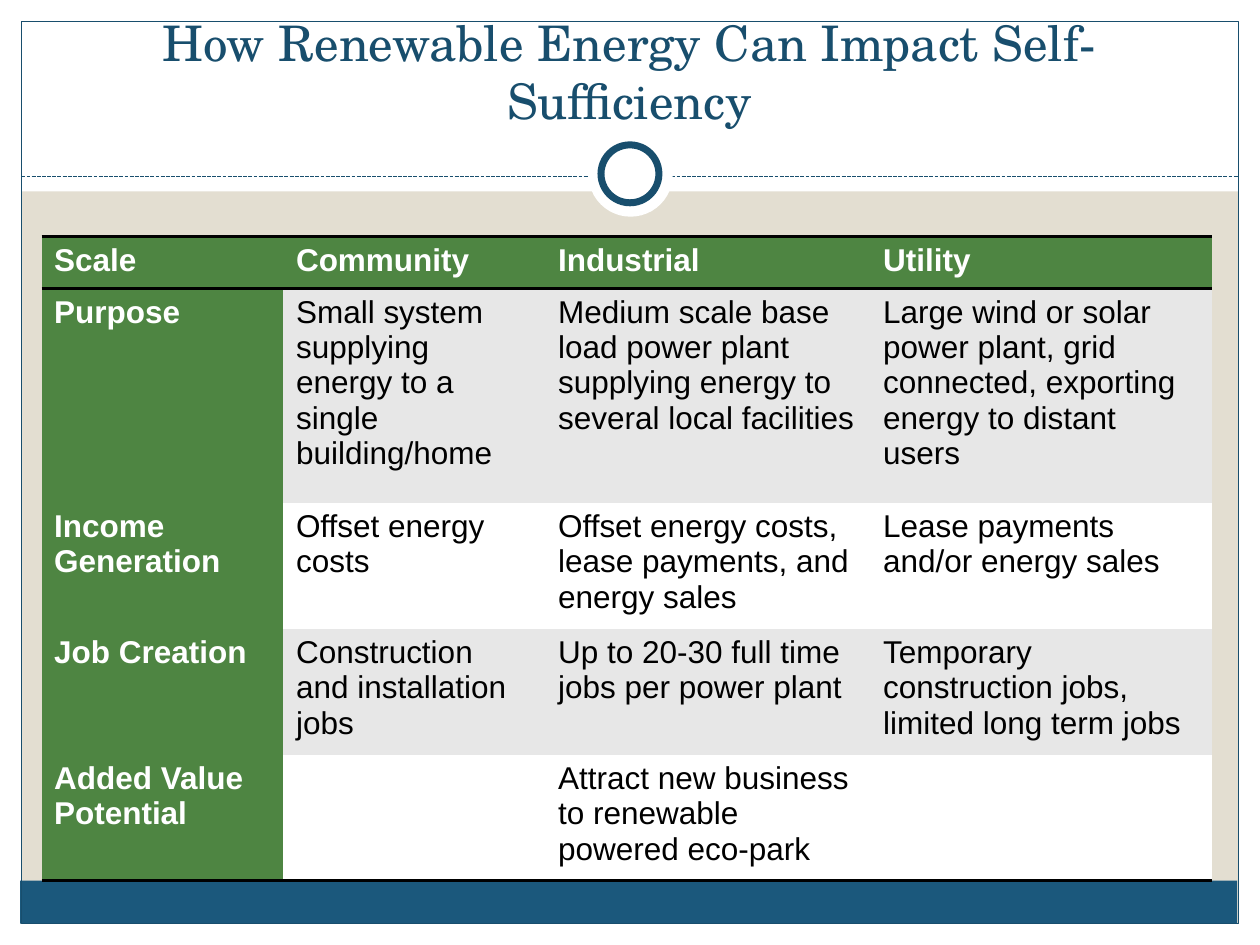
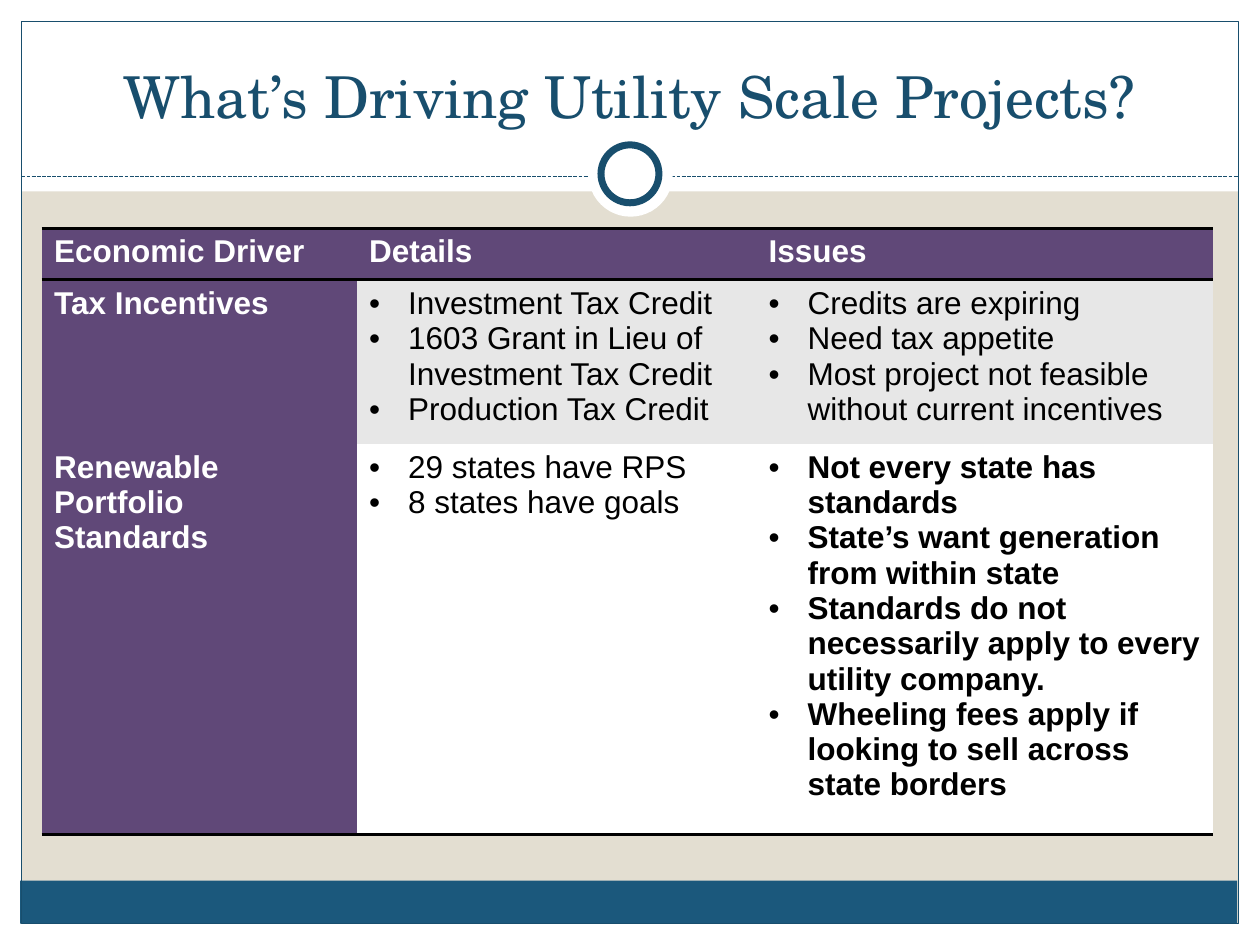
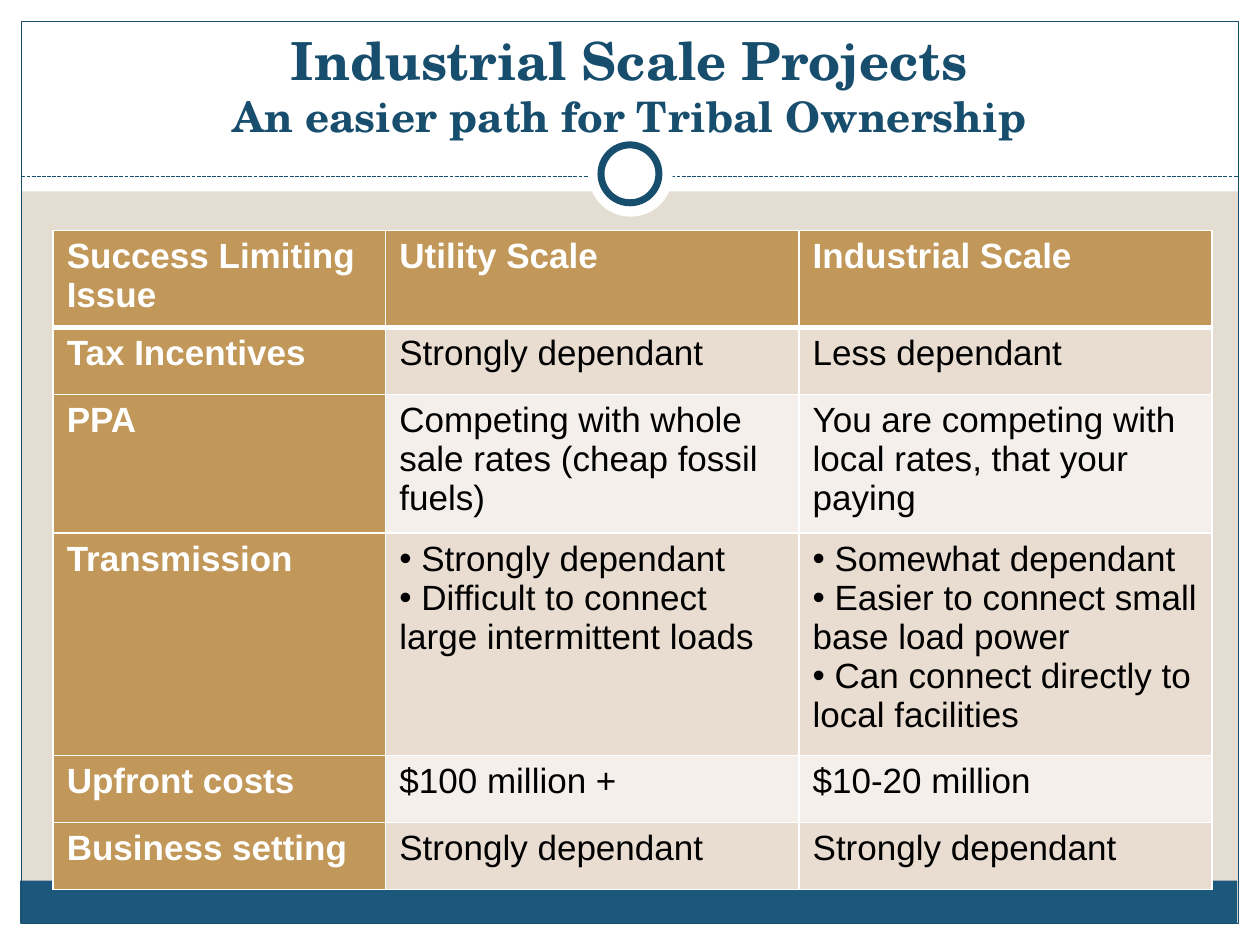
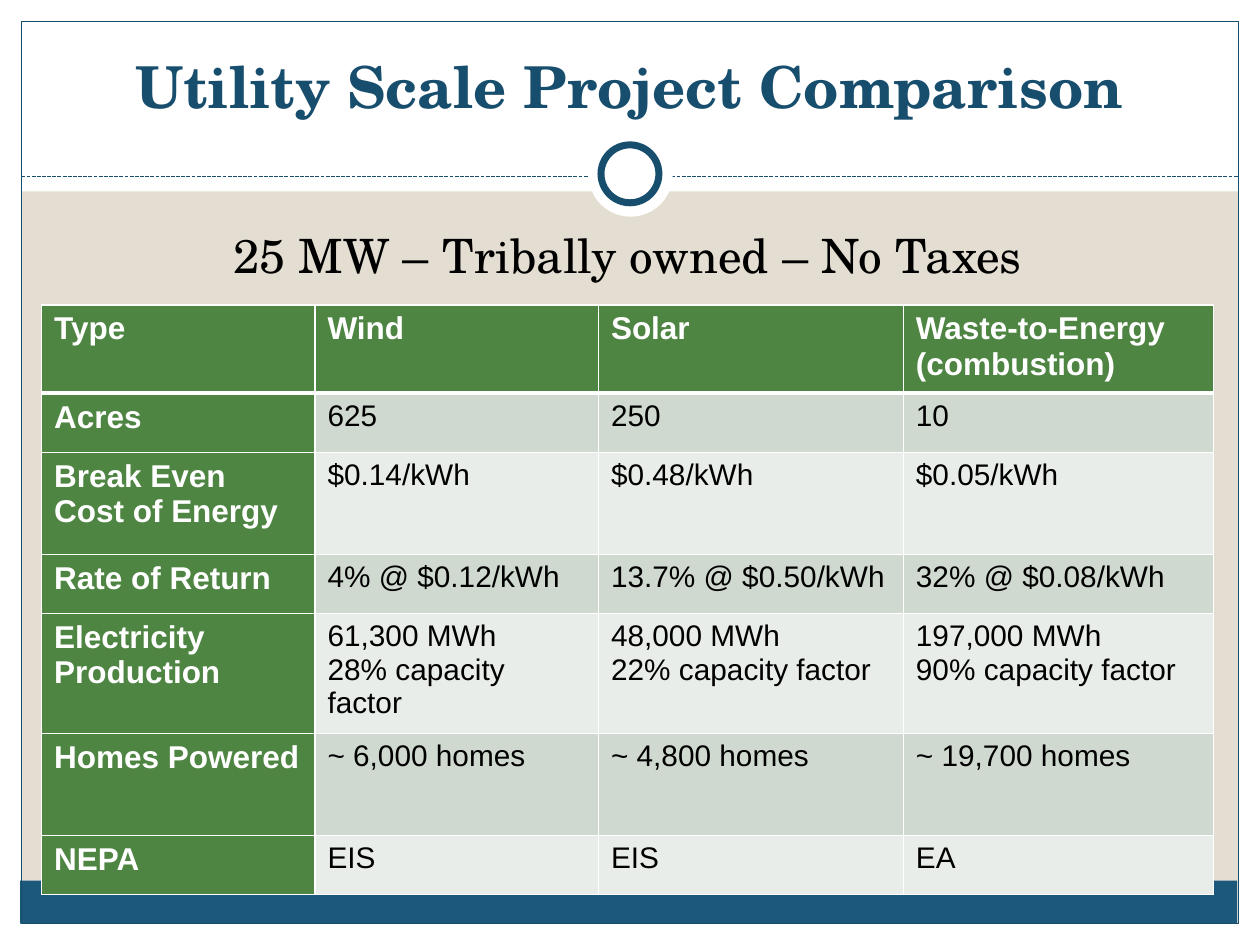
from dataclasses import dataclass
from typing import NamedTuple

from lxml.etree import SubElement
from pptx import Presentation
from pptx.dml.color import RGBColor
from pptx.enum.dml import MSO_LINE
from pptx.enum.shapes import MSO_CONNECTOR, MSO_SHAPE
from pptx.enum.text import MSO_ANCHOR, PP_ALIGN
from pptx.oxml.ns import qn
from pptx.util import Emu, Pt

PX = 9144  # 100 px to the inch
NO_STYLE_NO_GRID = "{2D5ABB26-0587-4C30-8999-92F81FD0307C}"


@dataclass(frozen=True)
class Theme:
    heading_font: str = "TeX Gyre Schola"
    body_font: str = "Arial"
    page: str = "E3DED1"
    white: str = "FFFFFF"
    black: str = "000000"
    navy: str = "184E6D"
    footer: str = "1B587C"
    green: str = "4E8542"
    purple: str = "604878"
    gold: str = "C19859"
    gray: str = "E7E7E7"
    title_size: int = 33
    subtitle_size: int = 27
    table_size: int = 18


THEME = Theme()


class Box(NamedTuple):
    left: int
    top: int
    width: int
    height: int

    def emu(self) -> list[Emu]:
        return [Emu(length * PX) for length in self]


class Part(NamedTuple):
    """One piece of the frame that every slide carries."""
    box: Box
    fill: str | None = None
    line: str | None = None
    line_width: float = 0.75
    outline: MSO_SHAPE = MSO_SHAPE.RECTANGLE


class TitleLine(NamedTuple):
    text: str
    size: int = THEME.title_size


class Title(NamedTuple):
    lines: tuple[TitleLine, ...]
    top: int = 25
    bold: bool = False


class Bullets(NamedTuple):
    items: tuple[str, ...]
    hang: int = 31
    bold: bool = False


class Borders(NamedTuple):
    """Rules of a table; a grid also has lines between rows and columns."""
    color: str
    edge: int
    header: int
    grid: bool


BLACK_RULES = Borders(THEME.black, edge=2, header=2, grid=False)
WHITE_GRID = Borders(THEME.white, edge=1, header=3, grid=True)


@dataclass(frozen=True)
class TableSpec:
    left: int
    top: int
    columns: tuple[int, ...]
    row_heights: tuple[int, ...]
    rows: tuple[tuple[str | Bullets, ...], ...]
    accent: str
    bands: tuple[str, str]
    borders: Borders
    label_size: int = THEME.table_size
    value_size: int = THEME.table_size
    side_inset: int = 10


@dataclass(frozen=True)
class SlideSpec:
    title: Title
    table: TableSpec
    subtitle: str = ""


FRAME_BACK = (
    Part(Box(0, 733, 1000, 17), THEME.white),
    Part(Box(0, 0, 1000, 152), THEME.white),
    Part(Box(0, 0, 17, 750), THEME.white),
    Part(Box(983, 0, 17, 750), THEME.white),
    Part(Box(16, 699, 966, 34), THEME.footer),
    Part(Box(17, 17, 966, 716), line=THEME.navy),
)
RING = (
    Part(Box(467, 105, 67, 67), THEME.white, outline=MSO_SHAPE.OVAL),
    Part(Box(477, 115, 46, 46), THEME.white, THEME.navy, 4, MSO_SHAPE.OVAL),
)

SLIDES = (
    SlideSpec(
        Title((TitleLine("How Renewable Energy Can Impact Self-Sufficiency", 28),)),
        TableSpec(
            33, 188, (192, 208, 258, 271), (41, 170, 100, 100, 100),
            (
                ("Scale", "Community", "Industrial", "Utility"),
                ("Purpose",
                 "Small system supplying energy to a single building/home",
                 "Medium scale base load power plant supplying energy to several local facilities",
                 "Large wind or solar power plant, grid connected, exporting energy to distant users"),
                ("Income Generation",
                 "Offset energy costs",
                 "Offset energy costs, lease payments, and energy sales",
                 "Lease payments and/or energy sales"),
                ("Job Creation",
                 "Construction and installation jobs",
                 "Up to 20-30 full time jobs per power plant",
                 "Temporary construction jobs, limited long term jobs"),
                ("Added Value Potential", "",
                 "Attract new business to renewable powered eco-park", ""),
            ),
            THEME.green, (THEME.gray, THEME.white), BLACK_RULES,
        ),
    ),
    SlideSpec(
        Title((TitleLine("What’s Driving Utility Scale Projects?"),)),
        TableSpec(
            33, 181, (250, 317, 363), (41, 121, 290),
            (
                ("Economic Driver", "Details", "Issues"),
                ("Tax Incentives",
                 Bullets(("Investment Tax Credit",
                          "1603 Grant in Lieu of Investment Tax Credit",
                          "Production Tax Credit")),
                 Bullets(("Credits are expiring",
                          "Need tax appetite",
                          "Most project not feasible without current incentives"))),
                ("Renewable Portfolio Standards",
                 Bullets(("29 states have RPS", "8 states have goals")),
                 Bullets(("Not every state has standards",
                          "State’s want generation from within state",
                          "Standards do not necessarily apply to every utility company.",
                          "Wheeling fees apply if looking to sell across state borders"),
                         bold=True)),
            ),
            THEME.purple, (THEME.gray, THEME.white), BLACK_RULES,
        ),
    ),
    SlideSpec(
        Title((TitleLine("Industrial Scale Projects", 30),
               TitleLine("An easier path for Tribal Ownership", 24)), top=34, bold=True),
        TableSpec(
            42, 183, (264, 328, 328), (77, 53, 109, 175, 53, 53),
            (
                ("Success Limiting Issue", "Utility Scale", "Industrial Scale"),
                ("Tax Incentives", "Strongly dependant", "Less dependant"),
                ("PPA",
                 "Competing with whole sale rates (cheap fossil fuels)",
                 "You are competing with local rates, that your paying"),
                ("Transmission",
                 Bullets((" Strongly dependant",
                          " Difficult to connect large intermittent loads"), hang=0),
                 Bullets((" Somewhat dependant",
                          " Easier to connect small base load power",
                          " Can connect directly to local facilities"), hang=0)),
                ("Upfront costs", "$100 million +", "$10-20 million"),
                ("Business setting", "Strongly dependant", "Strongly dependant"),
            ),
            THEME.gold, ("E9DDD1", "F4EFEA"), WHITE_GRID,
            label_size=20, value_size=20, side_inset=11,
        ),
    ),
    SlideSpec(
        Title((TitleLine("Utility Scale Project Comparison"),), top=17, bold=True),
        TableSpec(
            33, 242, (217, 225, 242, 246), (66, 47, 81, 47, 89, 81, 47),
            (
                ("Type", "Wind", "Solar", "Waste-to-Energy\n(combustion)"),
                ("Acres", "625", "250", "10"),
                ("Break Even Cost of Energy", "$0.14/kWh", "$0.48/kWh", "$0.05/kWh"),
                ("Rate of Return", "4% @ $0.12/kWh", "13.7% @ $0.50/kWh", "32% @ $0.08/kWh"),
                ("Electricity Production",
                 "61,300 MWh\n28% capacity factor",
                 "48,000 MWh\n22% capacity factor",
                 "197,000 MWh\n90% capacity factor"),
                ("Homes Powered", "~ 6,000 homes", "~ 4,800 homes", "~ 19,700 homes"),
                ("NEPA", "EIS", "EIS", "EA"),
            ),
            THEME.green, ("D0D9CF", "E9EDE9"), WHITE_GRID, value_size=17,
        ),
        subtitle="25 MW – Tribally owned – No Taxes",
    ),
)


def rgb(color: str) -> RGBColor:
    return RGBColor.from_string(color)


def set_font(font, name: str, size: int, color: str, bold: bool = False) -> None:
    font.name, font.size, font.bold = name, Pt(size), bold
    font.color.rgb = rgb(color)


def draw_part(slide, part: Part) -> None:
    shape = slide.shapes.add_shape(part.outline, *part.box.emu())
    shape.shadow.inherit = False
    if part.fill:
        shape.fill.solid()
        shape.fill.fore_color.rgb = rgb(part.fill)
    else:
        shape.fill.background()
    if part.line:
        shape.line.color.rgb = rgb(part.line)
        shape.line.width = Pt(part.line_width)
    else:
        shape.line.fill.background()


def draw_frame(slide) -> None:
    """Draw the page colour, white margins, footer band, dashed rule and ring."""
    slide.background.fill.solid()
    slide.background.fill.fore_color.rgb = rgb(THEME.page)
    for part in FRAME_BACK:
        draw_part(slide, part)
    ends = Box(17, 140, 983, 140).emu()
    rule = slide.shapes.add_connector(MSO_CONNECTOR.STRAIGHT, *ends)
    rule.line.color.rgb = rgb(THEME.navy)
    rule.line.width = Pt(0.75)
    rule.line.dash_style = MSO_LINE.SQUARE_DOT
    SubElement(rule._element.spPr, qn("a:effectLst"))
    for part in RING:
        draw_part(slide, part)


def add_centered_text(slide, box: Box, anchor: MSO_ANCHOR):
    """Add a wrapping text box and return its centred first paragraph."""
    frame = slide.shapes.add_textbox(*box.emu()).text_frame
    frame.word_wrap = True
    frame.vertical_anchor = anchor
    paragraph = frame.paragraphs[0]
    paragraph.alignment = PP_ALIGN.CENTER
    return paragraph


def draw_title(slide, title: Title) -> None:
    paragraph = add_centered_text(slide, Box(33, title.top, 933, 83), MSO_ANCHOR.BOTTOM)
    set_font(paragraph.font, THEME.heading_font, title.lines[0].size, THEME.navy, title.bold)
    for index, line in enumerate(title.lines):
        if index:
            paragraph.add_line_break()
        run = paragraph.add_run()
        run.text = line.text
        if line.size != title.lines[0].size:
            run.font.size = Pt(line.size)


def draw_subtitle(slide, subtitle: str) -> None:
    paragraph = add_centered_text(slide, Box(33, 175, 930, 500), MSO_ANCHOR.TOP)
    paragraph.text = subtitle
    set_font(paragraph.font, THEME.heading_font, THEME.subtitle_size, THEME.black)


def add_bullet(paragraph, hang: int) -> None:
    properties = paragraph._p.get_or_add_pPr()
    properties.set("marL", str(hang * PX))
    properties.set("indent", str(-hang * PX))
    SubElement(properties, qn("a:buFont"), typeface=THEME.body_font)
    SubElement(properties, qn("a:buChar"), char="•")


def draw_borders(cell, borders: Borders, row: int, last_row: int) -> None:
    widths = {}
    if borders.grid:
        widths = {"a:lnL": borders.edge, "a:lnR": borders.edge}
    if row == 0:
        widths |= {"a:lnT": borders.edge, "a:lnB": borders.header}
    elif borders.grid or row == last_row:
        widths["a:lnB"] = borders.edge
    properties = cell._tc.get_or_add_tcPr()
    for tag, width in widths.items():
        line = SubElement(properties, qn(tag), w=str(Pt(width)))
        SubElement(SubElement(line, qn("a:solidFill")), qn("a:srgbClr"), val=borders.color)


def fill_cell(cell, content: str | Bullets, spec: TableSpec, row: int, column: int) -> None:
    is_label = row == 0 or column == 0
    bulleted = isinstance(content, Bullets)
    cell.margin_left = cell.margin_right = Emu(spec.side_inset * PX)
    draw_borders(cell, spec.borders, row, len(spec.rows) - 1)
    cell.fill.solid()
    cell.fill.fore_color.rgb = rgb(spec.accent if is_label else spec.bands[(row - 1) % 2])
    for index, text in enumerate(content.items if bulleted else content.split("\n")):
        frame = cell.text_frame
        paragraph = frame.add_paragraph() if index else frame.paragraphs[0]
        paragraph.text = text
        if bulleted:
            add_bullet(paragraph, content.hang)
        set_font(
            paragraph.font,
            THEME.body_font,
            spec.label_size if is_label else spec.value_size,
            THEME.white if is_label else THEME.black,
            is_label or (bulleted and content.bold),
        )


def draw_table(slide, spec: TableSpec) -> None:
    box = Box(spec.left, spec.top, sum(spec.columns), sum(spec.row_heights))
    table = slide.shapes.add_table(len(spec.rows), len(spec.columns), *box.emu()).table
    table._tbl.tblPr.find(qn("a:tableStyleId")).text = NO_STYLE_NO_GRID
    for column, width in zip(table.columns, spec.columns):
        column.width = Emu(width * PX)
    for row, height in zip(table.rows, spec.row_heights):
        row.height = Emu(height * PX)
    for row, contents in enumerate(spec.rows):
        for column, content in enumerate(contents):
            fill_cell(table.cell(row, column), content, spec, row, column)


def main() -> None:
    deck = Presentation()
    deck.slide_width, deck.slide_height = Emu(1000 * PX), Emu(750 * PX)
    blank = deck.slide_layouts[6]
    for spec in SLIDES:
        slide = deck.slides.add_slide(blank)
        draw_frame(slide)
        if spec.subtitle:
            draw_subtitle(slide, spec.subtitle)
        draw_title(slide, spec.title)
        draw_table(slide, spec.table)
    deck.save("out.pptx")


if __name__ == "__main__":
    main()
